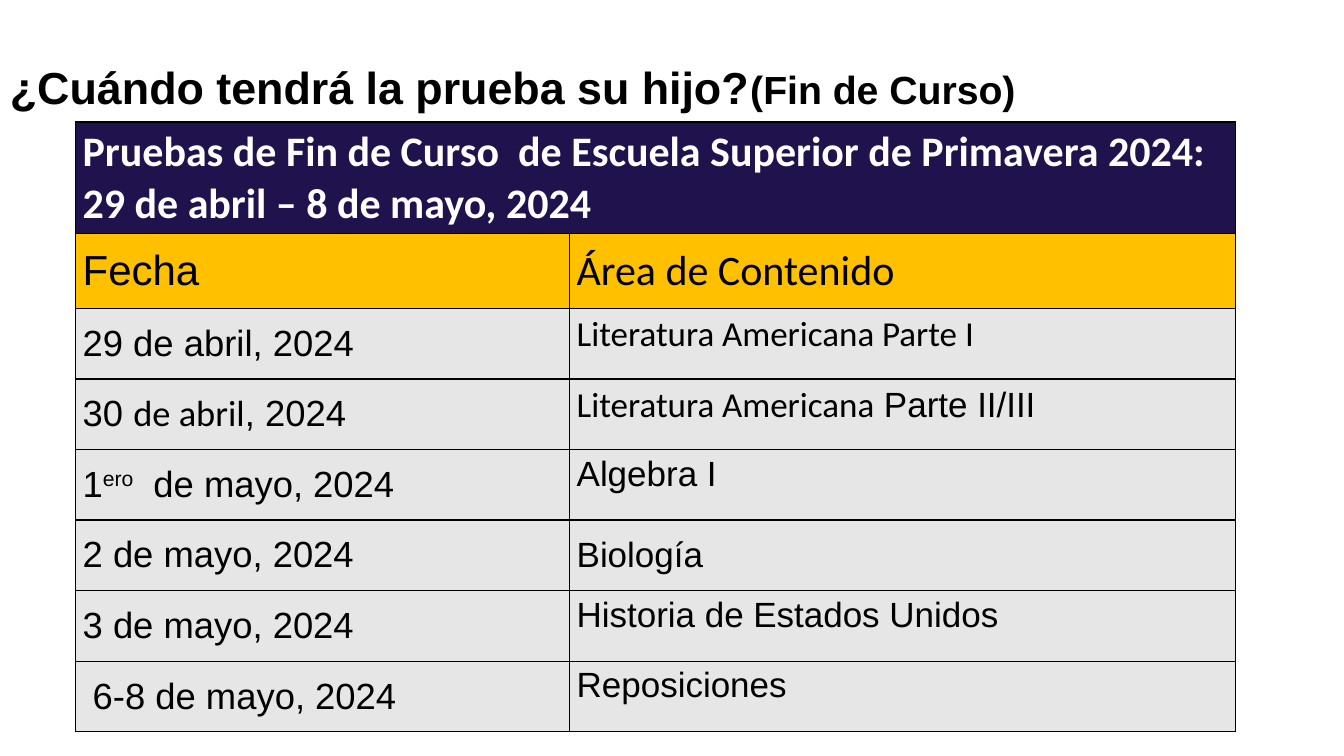
from lxml.etree import SubElement
from pptx import Presentation
from pptx.dml.color import RGBColor
from pptx.enum.text import MSO_ANCHOR as ANCHOR
from pptx.oxml.ns import qn
from pptx.util import Inches, Pt

COLORS = {"black": "000000", "white": "FFFFFF", "navy": "20124D",
          "gold": "FFC000", "gray": "E7E6E6"}

# A text is a list of runs: (wording, changes to the base format)
CALIBRI = {"name": "Calibri"}
TITLE = [("¿Cuándo tendrá la prueba su hijo?", {"size": 32}),
         ("(Fin de Curso)", {"size": 28})]
BANNER = [("Pruebas de Fin de Curso  de Escuela Superior de Primavera 2024: "
           "29 de abril – 8 de mayo, 2024", CALIBRI)]
HEADINGS = [[("Fecha", {})], [("Área de Contenido", CALIBRI)]]
SCHEDULE = [
    ([("29 de abril, 2024", {})],
     [("Literatura Americana Parte I", CALIBRI)]),
    ([("30 ", {}), ("de abril", CALIBRI), (", 2024", {})],
     [("Literatura Americana", CALIBRI), (" Parte II/III", {})]),
    ([("1", {}), ("ero", {"baseline": 30}), ("  de mayo, 2024", {})],
     [("Algebra I", {})]),
    ([("2 de mayo, 2024", {})], [("Biología", {})]),
    ([("3 de mayo, 2024", {})], [("Historia de Estados Unidos", {})]),
    ([("6-8 de mayo, 2024", {})], [("Reposiciones", {})]),
]
CENTERED_SUBJECT = 4
INDENTED_DATE = 5

SLIDE_W, SLIDE_H = 13.33, 7.5
TABLE_LEFT, TABLE_TOP = 0.75, 1.21
COLUMNS = [4.9, 6.6]
BANNER_H, HEADING_H, ROW_H = 1.11, 0.74, 0.7
MARGIN_X, MARGIN_Y, INDENT = 0.07, 0.05, 0.1


def rgb(name):
    return RGBColor.from_string(COLORS[name])


def write(p, runs, **base):
    for text, changes in runs:
        style = {"name": "Arial", "bold": False, "color": "black", **base, **changes}
        r = p.add_run()
        r.text = text
        r.font.size = Pt(style.pop("size"))
        r.font.color.rgb = rgb(style.pop("color"))
        baseline = style.pop("baseline", 0)
        for key, value in style.items():
            setattr(r.font, key, value)
        if baseline:
            r.font._element.set("baseline", str(baseline * 1000))


def add_borders(cell):
    tc_pr = cell._tc.get_or_add_tcPr()
    for i, side in enumerate(("a:lnL", "a:lnR", "a:lnT", "a:lnB")):
        ln = tc_pr.makeelement(qn(side), {"w": str(Pt(1))})
        fill = SubElement(ln, qn("a:solidFill"))
        SubElement(fill, qn("a:srgbClr"), val=COLORS["black"])
        tc_pr.insert(i, ln)


def fill_cell(cell, runs, fill, anchor=ANCHOR.MIDDLE, indent=0, **base):
    cell.fill.solid()
    cell.fill.fore_color.rgb = rgb(fill)
    cell.vertical_anchor = anchor
    cell.margin_left = Inches(MARGIN_X + indent)
    cell.margin_right = Inches(MARGIN_X)
    cell.margin_top = cell.margin_bottom = Inches(MARGIN_Y)
    write(cell.text_frame.paragraphs[0], runs, **base)


def add_title(s):
    box = s.shapes.add_textbox(0, Inches(0.6), Inches(11.5), Inches(0.88))
    tf = box.text_frame
    tf.word_wrap = True
    p = tf.paragraphs[0]
    p.line_spacing = 0.9
    write(p, TITLE, bold=True)


def add_schedule(s):
    heights = [BANNER_H, HEADING_H] + [ROW_H] * len(SCHEDULE)
    table = s.shapes.add_table(
        len(heights), len(COLUMNS), Inches(TABLE_LEFT), Inches(TABLE_TOP),
        Inches(sum(COLUMNS)), Inches(sum(heights))).table
    for column, width in zip(table.columns, COLUMNS):
        column.width = Inches(width)
    for row, height in zip(table.rows, heights):
        row.height = Inches(height)

    banner = table.cell(0, 0)
    banner.merge(table.cell(0, 1))
    fill_cell(banner, BANNER, "navy", size=30, bold=True, color="white")
    for col, heading in enumerate(HEADINGS):
        fill_cell(table.cell(1, col), heading, "gold", size=30)
    for i, (date, subject) in enumerate(SCHEDULE):
        fill_cell(table.cell(i + 2, 0), date, "gray", size=26,
                  indent=INDENT if i == INDENTED_DATE else 0)
        anchor = ANCHOR.MIDDLE if i == CENTERED_SUBJECT - 1 else ANCHOR.TOP
        fill_cell(table.cell(i + 2, 1), subject, "gray", anchor, size=25)
    for cell in table.iter_cells():
        add_borders(cell)


def main():
    prs = Presentation()
    prs.slide_width, prs.slide_height = Inches(SLIDE_W), Inches(SLIDE_H)
    s = prs.slides.add_slide(prs.slide_layouts[6])
    add_title(s)
    add_schedule(s)
    prs.save("out.pptx")


if __name__ == "__main__":
    main()
